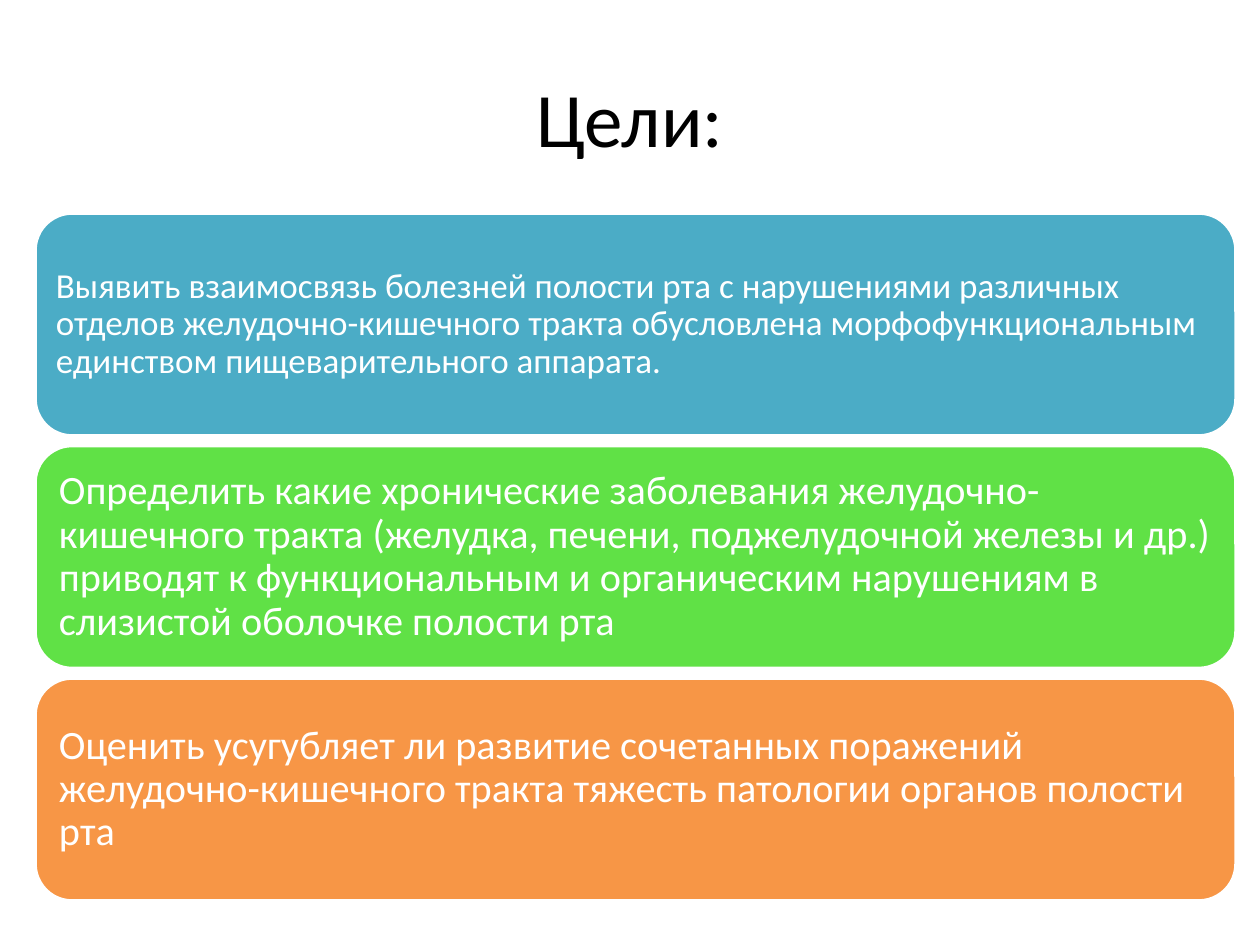
from pptx import Presentation
from pptx import util as u
from pptx.dml.color import RGBColor
from pptx.enum import shapes, text

PX_PER_INCH = 126
COLOURS = {
    "black": "000000",
    "white": "FFFFFF",
    "blue": "4BACC6",
    "green": "60E146",
    "orange": "F79646",
}
TITLE_ONLY_LAYOUT = 5

# Goal cards: fill, text size, inset, wording
GOALS = [
    ("blue", 20, 10,
     "Выявить взаимосвязь болезней полости рта с нарушениями различных отделов "
     "желудочно-кишечного тракта обусловлена морфофункциональным единством "
     "пищеварительного аппарата."),
    ("green", 23, 13,
     "Определить какие хронические заболевания желудочно-кишечного тракта "
     "(желудка, печени, поджелудочной железы и др.) приводят к функциональным "
     "и органическим нарушениям в слизистой оболочке полости рта"),
    ("orange", 23, 13,
     "Оценить усугубляет ли развитие сочетанных поражений желудочно-кишечного "
     "тракта тяжесть патологии органов полости рта"),
]
CARD_LEFT, CARD_WIDTH, CARD_HEIGHT = 35, 1201, 223
FIRST_TOP, LAST_TOP = 213, 678


def px(length):
    return u.Emu(round(length * u.Inches(1) / PX_PER_INCH))


def colour(name):
    return RGBColor.from_string(COLOURS[name])


def set_all(target, values):
    for name, value in values.items():
        setattr(target, name, value)


class GoalSlide:
    font = "Calibri"

    def __init__(self, deck):
        self.slide = deck.slides.add_slide(deck.slide_layouts[TITLE_ONLY_LAYOUT])

    def fill_text(self, box, wording, size, ink, align, inset, line_spacing):
        frame = box.text_frame
        set_all(frame, {
            "word_wrap": True,
            "vertical_anchor": text.MSO_ANCHOR.MIDDLE,
            **{f"margin_{side}": px(inset)
               for side in ("left", "top", "right", "bottom")},
        })
        para = frame.paragraphs[0]
        set_all(para, {"alignment": align, "line_spacing": line_spacing})
        span = para.add_run()
        span.text = wording
        set_all(span.font, {"name": self.font, "size": u.Pt(size)})
        span.font.color.rgb = colour(ink)

    def title(self, wording, left, top, width, height):
        box = self.slide.shapes.title
        set_all(box, {"left": px(left), "top": px(top),
                      "width": px(width), "height": px(height)})
        self.fill_text(box, wording, 44, "black", text.PP_ALIGN.CENTER, 10, 1.0)

    def card(self, top, fill, size, inset, wording):
        box = self.slide.shapes.add_shape(
            shapes.MSO_SHAPE.ROUNDED_RECTANGLE,
            px(CARD_LEFT), px(top), px(CARD_WIDTH), px(CARD_HEIGHT))
        box.shadow.inherit = False
        box.fill.solid()
        box.fill.fore_color.rgb = colour(fill)
        box.line.color.rgb = colour("white")
        box.line.width = u.Pt(2)
        self.fill_text(box, wording, size, "white", text.PP_ALIGN.LEFT, inset, 0.9)


def main():
    deck = Presentation()
    set_all(deck, {"slide_width": px(1260), "slide_height": px(945)})
    page = GoalSlide(deck)

    # Heading
    page.title("Цели:", 63, 38, 1134, 158)

    # Evenly stacked cards
    pitch = (LAST_TOP - FIRST_TOP) / (len(GOALS) - 1)
    for row, goal in enumerate(GOALS):
        page.card(FIRST_TOP + row * pitch, *goal)

    deck.save("out.pptx")


if __name__ == "__main__":
    main()
